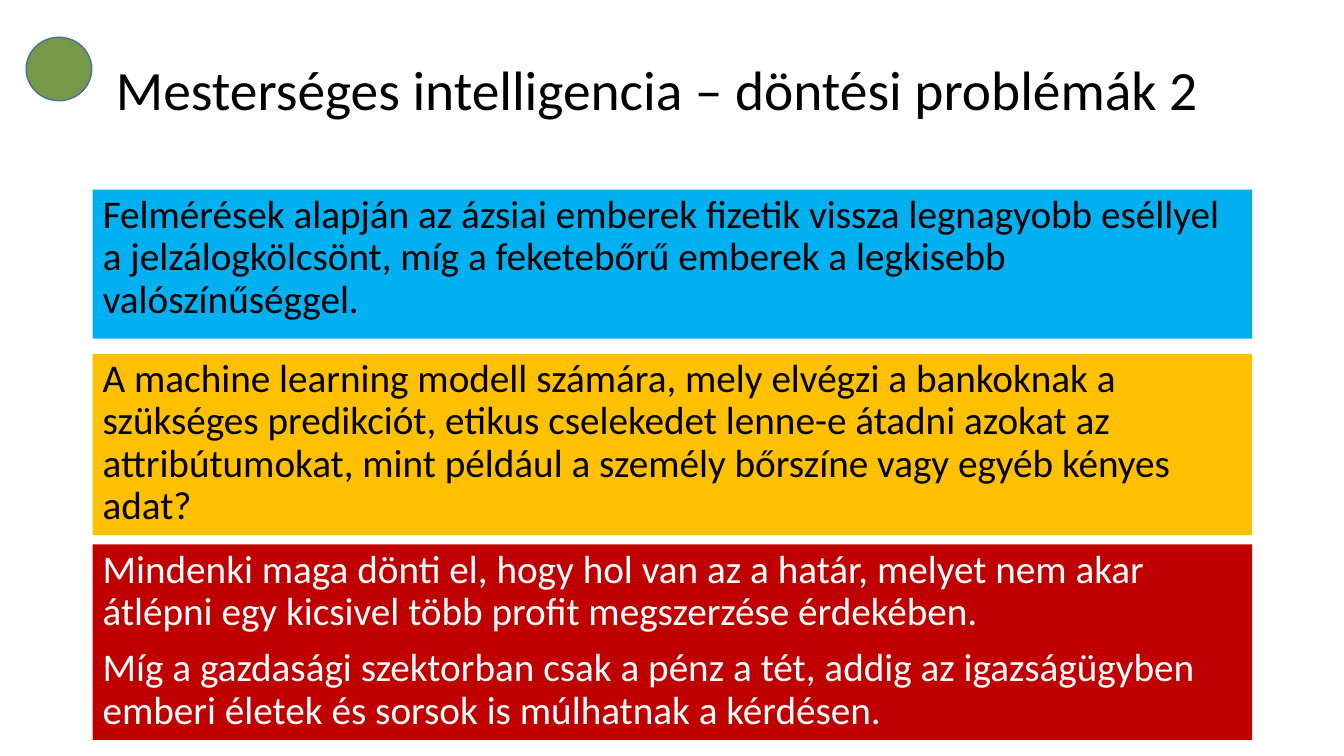
from dataclasses import dataclass

from lxml import etree
from pptx import Presentation
from pptx.dml.color import RGBColor
from pptx.enum.shapes import MSO_SHAPE
from pptx.enum.text import MSO_ANCHOR, MSO_AUTO_SIZE, PP_ALIGN
from pptx.oxml.ns import qn
from pptx.util import Inches, Pt

RECTANGLE, OVAL = MSO_SHAPE.RECTANGLE, MSO_SHAPE.OVAL
TOP, MIDDLE = MSO_ANCHOR.TOP, MSO_ANCHOR.MIDDLE
LEFT = PP_ALIGN.LEFT
NO_AUTOFIT = MSO_AUTO_SIZE.NONE
TITLE_AND_CONTENT = 1

# The slide is a grid of 100 columns by 100 rows
WIDTH, HEIGHT = Inches(13.33), Inches(7.5)
COLUMN, ROW = WIDTH / 100, HEIGHT / 100
PANEL_LEFT, PANEL_WIDTH = 6.9, 86.27


@dataclass(frozen=True)
class Theme:
    font: str = "Calibri"
    title_size: float = 39.6
    body_size: float = 28
    line_spacing: float = 0.9
    paragraph_gap: float = 10
    dark: str = "000000"
    light: str = "FFFFFF"
    survey: str = "00B0F0"
    question: str = "FFC000"
    conclusion: str = "C00000"
    badge: str = "759949"
    badge_edge: str = "43739E"


THEME = Theme()

TITLE = "Mesterséges intelligencia – döntési problémák 2"
SURVEY = [
    "Felmérések alapján az ázsiai emberek fizetik vissza legnagyobb eséllyel "
    "a jelzálogkölcsönt, míg a feketebőrű emberek a legkisebb valószínűséggel.",
]
QUESTION = [
    "A machine learning modell számára, mely elvégzi a bankoknak a szükséges "
    "predikciót, etikus cselekedet lenne-e átadni azokat az attribútumokat, "
    "mint például a személy bőrszíne vagy egyéb kényes adat?",
]
CONCLUSION = [
    "Mindenki maga dönti el, hogy hol van az a határ, melyet nem akar átlépni "
    "egy kicsivel több profit megszerzése érdekében.",
    "Míg a gazdasági szektorban csak a pénz a tét, addig az igazságügyben "
    "emberi életek és sorsok is múlhatnak a kérdésen.",
]


def grid_box(column, row, columns, rows):
    return (round(column * COLUMN), round(row * ROW),
            round(columns * COLUMN), round(rows * ROW))


def place(shape, box):
    shape.left, shape.top, shape.width, shape.height = box


def paint(shape, color):
    shape.fill.solid()
    shape.fill.fore_color.rgb = RGBColor.from_string(color)


def write(shape, texts, size, color, anchor):
    frame = shape.text_frame
    frame.text = "\n".join(texts)
    frame.word_wrap = True
    frame.auto_size = NO_AUTOFIT
    frame.vertical_anchor = anchor
    for index, paragraph in enumerate(frame.paragraphs):
        paragraph.alignment = LEFT
        paragraph.line_spacing = THEME.line_spacing
        paragraph.space_before = Pt(THEME.paragraph_gap if index else 0)
        # Plain text without bullet or hanging indent
        properties = paragraph._p.get_or_add_pPr()
        properties.set("marL", "0")
        properties.set("indent", "0")
        etree.SubElement(properties, qn("a:buNone"))
        for run in paragraph.runs:
            run.font.name = THEME.font
            run.font.size = Pt(size)
            run.font.color.rgb = RGBColor.from_string(color)


def fill_panel(panel, texts, fill, color):
    paint(panel, fill)
    write(panel, texts, THEME.body_size, color, TOP)


def add_panel(slide, row, rows, texts, fill, color):
    box = grid_box(PANEL_LEFT, row, PANEL_WIDTH, rows)
    panel = slide.shapes.add_shape(RECTANGLE, *box)
    panel.shadow.inherit = False
    panel.line.fill.background()
    fill_panel(panel, texts, fill, color)


def add_badge(slide, box):
    badge = slide.shapes.add_shape(OVAL, *box)
    badge.shadow.inherit = False
    paint(badge, THEME.badge)
    badge.line.color.rgb = RGBColor.from_string(THEME.badge_edge)
    badge.line.width = Pt(1)


def main():
    deck = Presentation()
    deck.slide_width, deck.slide_height = WIDTH, HEIGHT
    slide = deck.slides.add_slide(deck.slide_layouts[TITLE_AND_CONTENT])

    # Heading
    heading = slide.shapes.title
    place(heading, grid_box(7.88, 8.27, 85.22, 8))
    write(heading, [TITLE], THEME.title_size, THEME.dark, MIDDLE)

    # Survey finding, ethical question and conclusion
    survey = slide.placeholders[1]
    place(survey, grid_box(PANEL_LEFT, 25.07, PANEL_WIDTH, 19.73))
    fill_panel(survey, SURVEY, THEME.survey, THEME.dark)
    add_panel(slide, 46.8, 24, QUESTION, THEME.question, THEME.dark)
    add_panel(slide, 72, 25.87, CONCLUSION, THEME.conclusion, THEME.light)

    # Corner badge
    add_badge(slide, grid_box(1.95, 4.93, 4.88, 8.4))

    deck.save("out.pptx")


if __name__ == "__main__":
    main()
